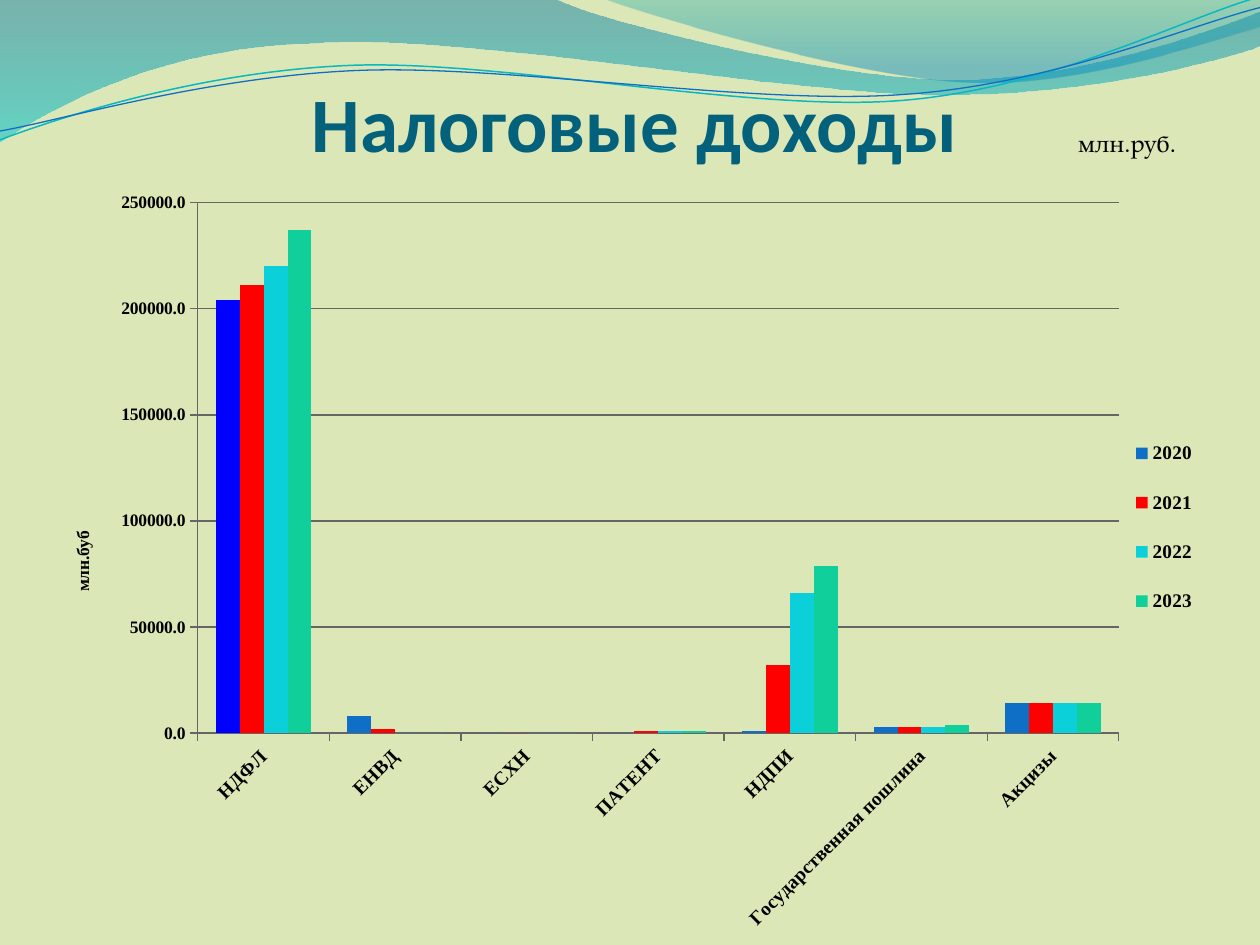
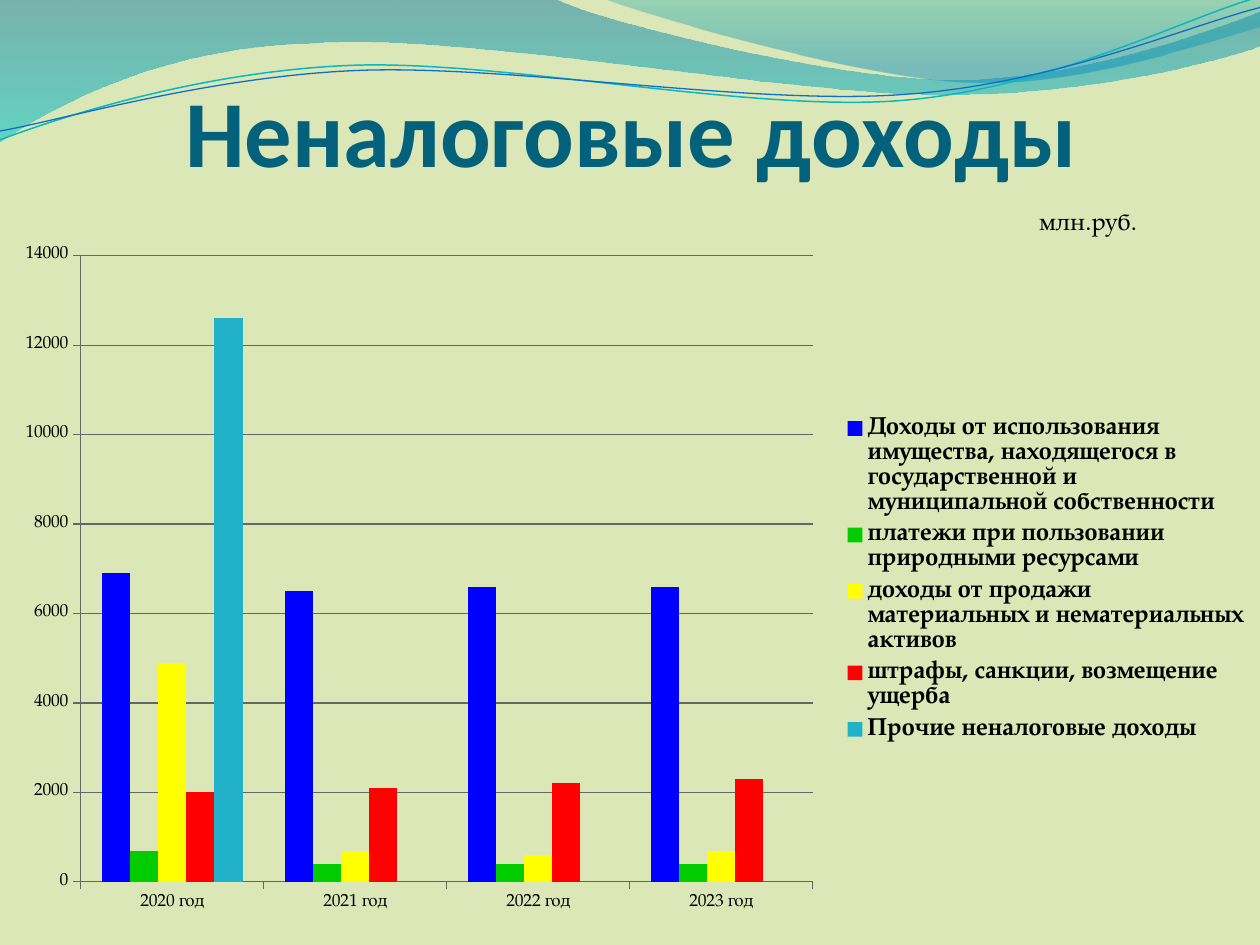
from lxml import etree
from pptx import Presentation
from pptx.chart.data import CategoryChartData
from pptx.dml.color import RGBColor
from pptx.enum.chart import XL_CHART_TYPE, XL_LEGEND_POSITION, XL_TICK_MARK
from pptx.enum.text import MSO_ANCHOR, MSO_AUTO_SIZE, PP_ALIGN
from pptx.oxml.ns import qn
from pptx.util import Inches, Pt

BODY, SERIF, HEADING = "TeX Gyre Pagella", "Times New Roman", "Calibri"
BACKGROUND, TITLE, BLACK, GRID = "DBE7B6", "04617B", "000000", "666666"

BANDS = [
    ((0, 0),
     [[(4.4, -0.01)],
      [(4.76, 0.17), (6.64, 0.63), (7.58, 0.63)], [(8.53, 0.63), (9.58, 0.26), (10, 0.09)],
      [(10.01, 0.36)],
      [(9.83, 0.44), (8.7, 0.76), (7.46, 0.75)], [(6.22, 0.75), (3.82, 0.28), (2.57, 0.34)],
      [(1.29, 0.36), (0.46, 0.83), (-0.01, 1.13)]],
     [(0, "0074A1", 45), (1, "00C6CF", 55)]),
    ((4.79, -0.01),
     [[(5.09, 0.11), (6.82, 0.62), (7.69, 0.65)], [(8.56, 0.69), (9.61, 0.32), (10, 0.21)],
      [(10, 0)]],
     [(0, "00A1A9", 30), (0.8, "008BBF", 45)]),
]
WAVES = [
    ((0, 1.11),
     [[(0.48, 0.93), (1.58, 0.57), (2.77, 0.52)], [(3.95, 0.47), (5.93, 0.89), (7.13, 0.8)],
      [(8.33, 0.71), (9.38, 0.15), (9.98, -0.02)]],
     "0AB8BF", 0.85),
    ((0, 1.04),
     [[(0.47, 0.96), (1.64, 0.61), (2.83, 0.56)], [(4.03, 0.51), (5.97, 0.84), (7.17, 0.75)],
      [(8.36, 0.67), (9.41, 0.21), (10, 0.06)]],
     "0F6FC6", 0.75),
]

TAXES = ["НДФЛ", "ЕНВД", "ЕСХН", "ПАТЕНТ", "НДПИ", "Государственная пошлина", "Акцизы"]
TAX_SERIES = [
    ("2020", [204000, 8000, 0, 0, 1000, 3000, 14000], "0F6FC6"),
    ("2021", [211000, 2000, 0, 1000, 32000, 3000, 14000], "FF0000"),
    ("2022", [220000, 0, 0, 1000, 66000, 3000, 14000], "0BD0D9"),
    ("2023", [237000, 0, 0, 1000, 79000, 4000, 14000], "10CF9B"),
]
YEARS = [f"{year} год" for year in range(2020, 2024)]
NON_TAX_SERIES = [
    ("Доходы от использования имущества, находящегося в государственной и "
     "муниципальной собственности", [6900, 6500, 6600, 6600], "0000FF"),
    ("платежи при пользовании природными ресурсами", [700, 400, 400, 400], "00CC00"),
    ("доходы от продажи материальных и нематериальных активов",
     [4900, 700, 600, 700], "FFFF00"),
    ("штрафы, санкции, возмещение ущерба", [2000, 2100, 2200, 2300], "FF0000"),
    ("Прочие неналоговые доходы", [12600, None, None, None], "21B2C9"),
]


def rgb(value):
    return RGBColor.from_string(value)


def set_font(font, name, size, color=BLACK, bold=False):
    font.name, font.size, font.bold = name, Pt(size), bold
    font.color.rgb = rgb(color)


def set_line(line, color, width):
    line.color.rgb = rgb(color)
    line.width = Pt(width)


def bend(sp, segments):
    lines = list(sp.element.iter(qn("a:lnTo")))
    for line, segment in zip(lines, segments):
        if len(segment) == 1:
            continue
        curve = etree.Element(qn("a:cubicBezTo"))
        for x, y in segment:
            etree.SubElement(curve, qn("a:pt"), x=str(Inches(x) - sp.left),
                             y=str(Inches(y) - sp.top))
        line.getparent().replace(line, curve)


def set_layout(parent, index, frame, area):
    left, top, width, height = frame
    scale = {"x": (left, width), "y": (top, height), "w": (0, width), "h": (0, height)}
    for old in parent.findall(qn("c:layout")):
        parent.remove(old)
    layout = etree.Element(qn("c:layout"))
    manual = etree.SubElement(layout, qn("c:manualLayout"))
    if parent.tag == qn("c:plotArea"):
        etree.SubElement(manual, qn("c:layoutTarget"), val="inner")
    for key in "xy":
        etree.SubElement(manual, qn(f"c:{key}Mode"), val="edge")
    for (key, (origin, size)), value in zip(scale.items(), area):
        etree.SubElement(manual, qn(f"c:{key}"), val=f"{(value - origin) / size:.5f}")
    parent.insert(index, layout)


def rotate(chart, query, degrees):
    body = chart.element.xpath(query)[0]
    body.set("rot", str(degrees * 60000))
    body.set("vert", "horz")


class Deck:
    """Holds the shared style and the current slide."""

    def __init__(self):
        self.prs = Presentation()
        self.prs.slide_width, self.prs.slide_height = Inches(10), Inches(7.5)
        self.layout = self.prs.slide_layouts[5]
        fill = self.prs.slide_master.background.fill
        fill.solid()
        fill.fore_color.rgb = rgb(BACKGROUND)
        self.slide = None

    def add_slide(self):
        self.slide = self.prs.slides.add_slide(self.layout)

    def outline(self, start, segments, close):
        corners = [tuple(map(Inches, segment[-1])) for segment in segments]
        builder = self.slide.shapes.build_freeform(*map(Inches, start))
        builder.add_line_segments(corners, close=close)
        sp = builder.convert_to_shape()
        bend(sp, segments)
        sp.shadow.inherit = False
        return sp

    def band(self, start, segments, stops):
        sp = self.outline(start, segments, True)
        sp.line.fill.background()
        sp.fill.gradient()
        sp.fill.gradient_angle = 270
        for stop, (position, color, _) in zip(sp.fill.gradient_stops, stops):
            stop.position = position
            stop.color.rgb = rgb(color)
        for node, (_, _, opacity) in zip(sp.element.iter(qn("a:srgbClr")), stops):
            etree.SubElement(node, qn("a:alpha"), val=str(opacity * 1000))
        return sp

    def wave(self, start, segments, color, width):
        sp = self.outline(start, segments, False)
        sp.fill.background()
        set_line(sp.line, color, width)
        return sp

    def decorate_layout(self):
        shapes = [self.band(*band) for band in BANDS] + [self.wave(*wave) for wave in WAVES]
        tree = self.layout.placeholders[0].element.getparent()
        for i, sp in enumerate(shapes):
            sp.element.nvSpPr.cNvPr.set("id", str(100 + i))
            tree.insert(2 + i, sp.element)

    def title(self, text, box, size):
        sp = self.slide.shapes.title
        sp.left, sp.top, sp.width, sp.height = map(Inches, box)
        tf = sp.text_frame
        tf.text = text
        tf.auto_size, tf.word_wrap = MSO_AUTO_SIZE.NONE, True
        tf.vertical_anchor = MSO_ANCHOR.BOTTOM
        tf.margin_left = tf.margin_right = tf.margin_bottom = 0
        tf.margin_top = Inches(0.05)
        p = tf.paragraphs[0]
        p.alignment = PP_ALIGN.CENTER
        set_font(p.font, HEADING, size, TITLE, True)

    def unit(self, left, top):
        sp = self.slide.shapes.add_textbox(*map(Inches, (left, top, 1.33, 0.23)))
        tf = sp.text_frame
        tf.text, tf.word_wrap = "млн.руб.", True
        tf.vertical_anchor = MSO_ANCHOR.MIDDLE
        p = tf.paragraphs[0]
        p.alignment = PP_ALIGN.CENTER
        set_font(p.font, BODY, 14)

    def chart(self, frame, categories, series, top_value, step, plot_box, legend_box, legend_font):
        data = CategoryChartData()
        data.categories = categories
        for name, values, _ in series:
            data.add_series(name, values)
        chart = self.slide.shapes.add_chart(
            XL_CHART_TYPE.COLUMN_CLUSTERED, *map(Inches, frame), data).chart
        set_font(chart.font, BODY, 10)
        chart.has_title = False
        plot = chart.plots[0]
        plot.gap_width, plot.overlap, plot.vary_by_categories = 150, 0, False
        for bars, (_, _, color) in zip(plot.series, series):
            bars.format.fill.solid()
            bars.format.fill.fore_color.rgb = rgb(color)
        value_axis = chart.value_axis
        value_axis.minimum_scale, value_axis.maximum_scale = 0, top_value
        value_axis.major_unit = step
        value_axis.has_major_gridlines = True
        set_line(value_axis.major_gridlines.format.line, GRID, 0.75)
        for axis in (chart.category_axis, value_axis):
            axis.major_tick_mark = XL_TICK_MARK.OUTSIDE
            axis.minor_tick_mark = XL_TICK_MARK.NONE
            set_line(axis.format.line, GRID, 0.75)
        chart.has_legend = True
        legend = chart.legend
        legend.position = XL_LEGEND_POSITION.RIGHT
        legend.include_in_layout = False
        set_font(legend.font, *legend_font, bold=True)
        for tag, index, area in (("plotArea", 0, plot_box), ("legend", 1, legend_box)):
            set_layout(chart.element.xpath(f".//c:{tag}")[0], index, frame, area)
        return chart


def tax_slide(deck):
    frame = (0.39, 1.41, 9.3, 6.09)
    deck.title("Налоговые доходы", (0.5, 0.77, 9.08, 0.56), 44)
    deck.unit(8.28, 1.02)
    chart = deck.chart(frame, TAXES, TAX_SERIES, 250000, 50000,
                       (1.57, 1.61, 7.31, 4.21), (8.87, 3.29, 0.74, 1.79), (SERIF, 11))
    highlight = chart.plots[0].series[0].points[0].format.fill
    highlight.solid()
    highlight.fore_color.rgb = rgb("0000FF")
    set_font(chart.category_axis.tick_labels.font, SERIF, 11, bold=True)
    axis = chart.value_axis
    set_font(axis.tick_labels.font, SERIF, 10, bold=True)
    axis.tick_labels.number_format = "0.0"
    axis.tick_labels.number_format_is_linked = False
    tf = axis.axis_title.text_frame
    tf.text = "млн.буб"
    set_font(tf.paragraphs[0].font, SERIF, 10, bold=True)
    set_layout(chart.element.xpath(".//c:valAx/c:title")[0], 1, frame, (0.54, 4.19))
    rotate(chart, ".//c:valAx/c:title//a:bodyPr", -90)
    rotate(chart, ".//c:catAx/c:txPr/a:bodyPr", -45)


def non_tax_slide(deck):
    deck.title("Неналоговые доходы", (0.47, 0.23, 9.08, 1.25), 54)
    deck.unit(7.97, 1.64)
    deck.chart((0, 1.85, 10, 5.49), YEARS, NON_TAX_SERIES, 14000, 2000,
               (0.64, 2.03, 5.81, 4.97), (6.7, 3.25, 3.2, 2.69), (BODY, 14))


def main():
    deck = Deck()
    deck.add_slide()
    deck.decorate_layout()
    tax_slide(deck)
    deck.add_slide()
    non_tax_slide(deck)
    deck.prs.save("out.pptx")


if __name__ == "__main__":
    main()
